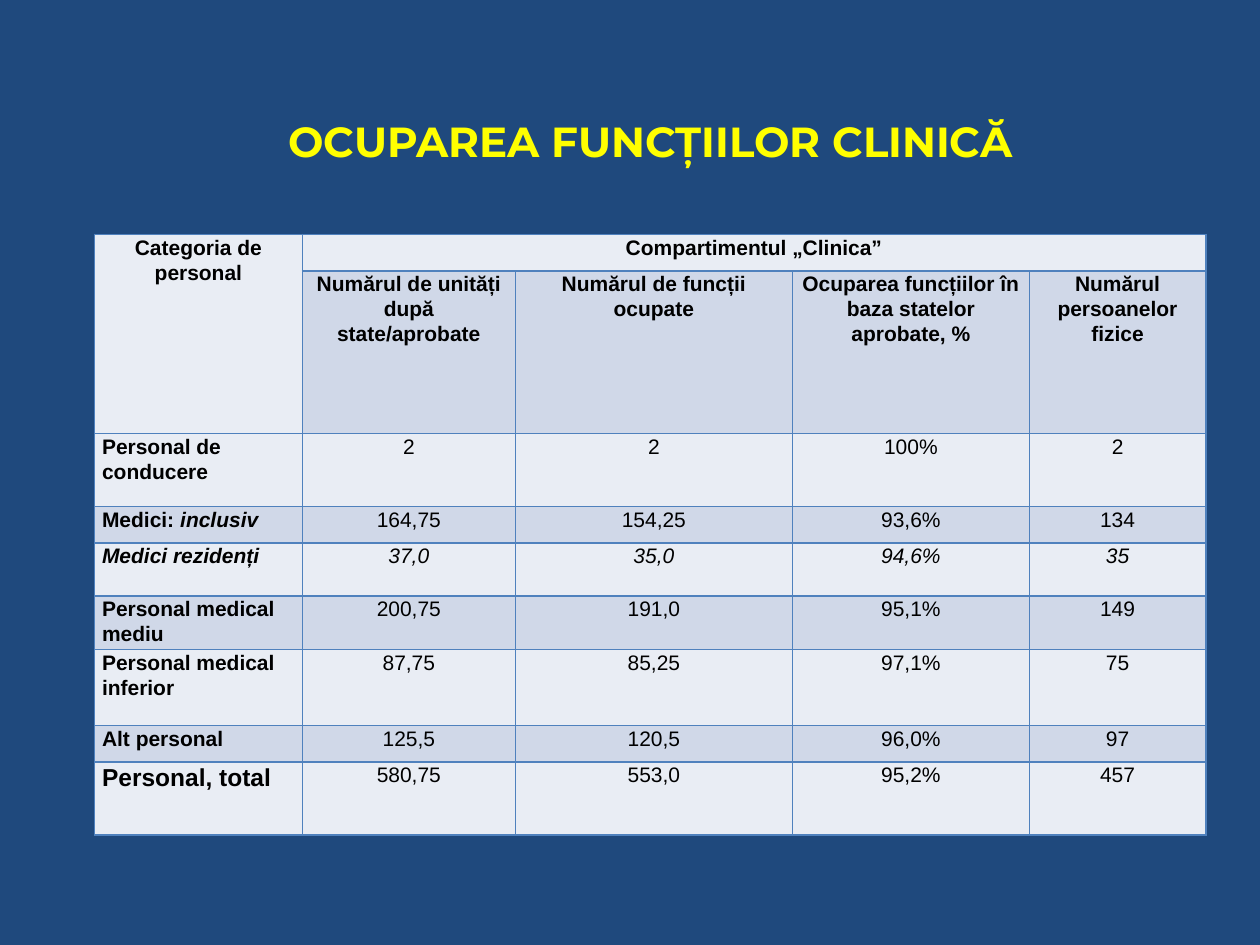
from lxml import etree
from pptx import Presentation
from pptx.dml.color import RGBColor
from pptx.enum.text import MSO_ANCHOR, PP_ALIGN
from pptx.oxml.ns import qn
from pptx.util import Inches, Pt

CENTER, LEFT = PP_ALIGN.CENTER, PP_ALIGN.LEFT
MIDDLE = MSO_ANCHOR.MIDDLE

BOLD = {"bold": True}
ITALIC = {"italic": True}
BOLD_ITALIC = {**BOLD, **ITALIC}
TOTAL = {"bold": True, "size": Pt(14)}

COLUMN_WIDTHS = [16.5, 16.9, 22, 18.8, 14]
ROW_HEIGHTS = [2.9, 12.9, 5.8, 2.9, 4.2, 4.2, 6, 2.9, 5.8]

HEADINGS = [
    "Numărul de unități după state/aprobate",
    "Numărul de funcții ocupate",
    "Ocuparea funcțiilor în baza statelor aprobate, %",
    "Numărul persoanelor fizice",
]
# Each staff category: label runs, values, format of the values
STAFF = [
    ([("Personal de conducere", BOLD)], ["2", "2", "100%", "2"], {}),
    ([("Medici: ", BOLD), ("inclusiv", BOLD_ITALIC)],
     ["164,75", "154,25", "93,6%", "134"], {}),
    ([("Medici rezidenți", BOLD_ITALIC)], ["37,0", "35,0", "94,6%", "35"], ITALIC),
    ([("Personal medical mediu", BOLD)], ["200,75", "191,0", "95,1%", "149"], {}),
    ([("Personal medical inferior", BOLD)], ["87,75", "85,25", "97,1%", "75"], {}),
    ([("Alt personal", BOLD)], ["125,5", "120,5", "96,0%", "97"], {}),
    ([("Personal, total", TOTAL)], ["580,75", "553,0", "95,2%", "457"], {}),
]


def color(value):
    return RGBColor.from_string(value)


def set_attributes(target, values):
    for name, value in values.items():
        setattr(target, name, value)


class SlideBuilder:
    """Style and current slide; lengths are steps of a 100 by 75 grid."""

    step = Inches(0.1)
    background = "1F497D"
    bands = ("E9EDF4", "D0D8E8")
    border = "4F81BD"
    title_font = {"name": "Montserrat", "size": Pt(24), "bold": True}
    title_color = "FFFF00"
    cell_font = {"name": "Arial", "size": Pt(12), "bold": False, "italic": False}
    cell_color = "000000"
    cell_margins = {
        "margin_left": Inches(0.06), "margin_right": Inches(0.06),
        "margin_top": 0, "margin_bottom": 0,
    }

    def __init__(self, presentation):
        presentation.slide_width = self.grid(100)
        presentation.slide_height = self.grid(75)
        self.slide = presentation.slides.add_slide(presentation.slide_layouts[6])
        fill = self.slide.background.fill
        fill.solid()
        fill.fore_color.rgb = color(self.background)

    def grid(self, steps):
        return round(steps * self.step)

    def add_runs(self, paragraph, runs, font, font_color):
        """Add (text, format) runs; each format overrides the base font."""
        for text, changes in runs:
            run = paragraph.add_run()
            run.text = text
            set_attributes(run.font, {**font, **changes})
            run.font.color.rgb = color(font_color)

    def title(self, text, *place):
        box = self.slide.shapes.add_textbox(*map(self.grid, place))
        set_attributes(box.text_frame, {"word_wrap": True, "vertical_anchor": MIDDLE})
        paragraph = box.text_frame.paragraphs[0]
        paragraph.alignment = CENTER
        self.add_runs(paragraph, [(text, {})], self.title_font, self.title_color)

    def table(self, left, top, column_widths, row_heights):
        frame = self.slide.shapes.add_table(
            len(row_heights), len(column_widths), self.grid(left), self.grid(top),
            self.grid(sum(column_widths)), self.grid(sum(row_heights)))
        table = frame.table
        for column, width in zip(table.columns, column_widths):
            column.width = self.grid(width)
        for index, (row, height) in enumerate(zip(table.rows, row_heights)):
            row.height = self.grid(height)
            for cell in row.cells:
                set_attributes(cell, self.cell_margins)
                self.cell_borders(cell)
                cell.fill.solid()
                cell.fill.fore_color.rgb = color(self.bands[index % 2])
        return table

    def cell_borders(self, cell):
        properties = cell._tc.get_or_add_tcPr()
        for side in ("a:lnL", "a:lnR", "a:lnT", "a:lnB"):
            line = etree.SubElement(properties, qn(side), w=str(Pt(1)))
            fill = etree.SubElement(line, qn("a:solidFill"))
            etree.SubElement(fill, qn("a:srgbClr"), val=self.border)

    def cell_text(self, cell, runs, alignment=CENTER):
        paragraph = cell.text_frame.paragraphs[0]
        set_attributes(paragraph, {"alignment": alignment, "line_spacing": 1.07})
        self.add_runs(paragraph, runs, self.cell_font, self.cell_color)


def main():
    presentation = Presentation()
    builder = SlideBuilder(presentation)
    builder.title("OCUPAREA FUNCȚIILOR CLINICĂ", 7.5, 6.8, 88.2, 8.7)

    table = builder.table(7.5, 18.6, COLUMN_WIDTHS, ROW_HEIGHTS)
    table.cell(0, 0).merge(table.cell(1, 0))
    table.cell(0, 1).merge(table.cell(0, 4))
    builder.cell_text(table.cell(0, 0), [("Categoria de personal", BOLD)])
    builder.cell_text(table.cell(0, 1), [("Compartimentul „Clinica”", BOLD)])
    for column, heading in enumerate(HEADINGS, start=1):
        builder.cell_text(table.cell(1, column), [(heading, BOLD)])

    for row, (label, values, value_format) in enumerate(STAFF, start=2):
        builder.cell_text(table.cell(row, 0), label, LEFT)
        for column, value in enumerate(values, start=1):
            builder.cell_text(table.cell(row, column), [(value, value_format)])

    presentation.save("out.pptx")


if __name__ == "__main__":
    main()
